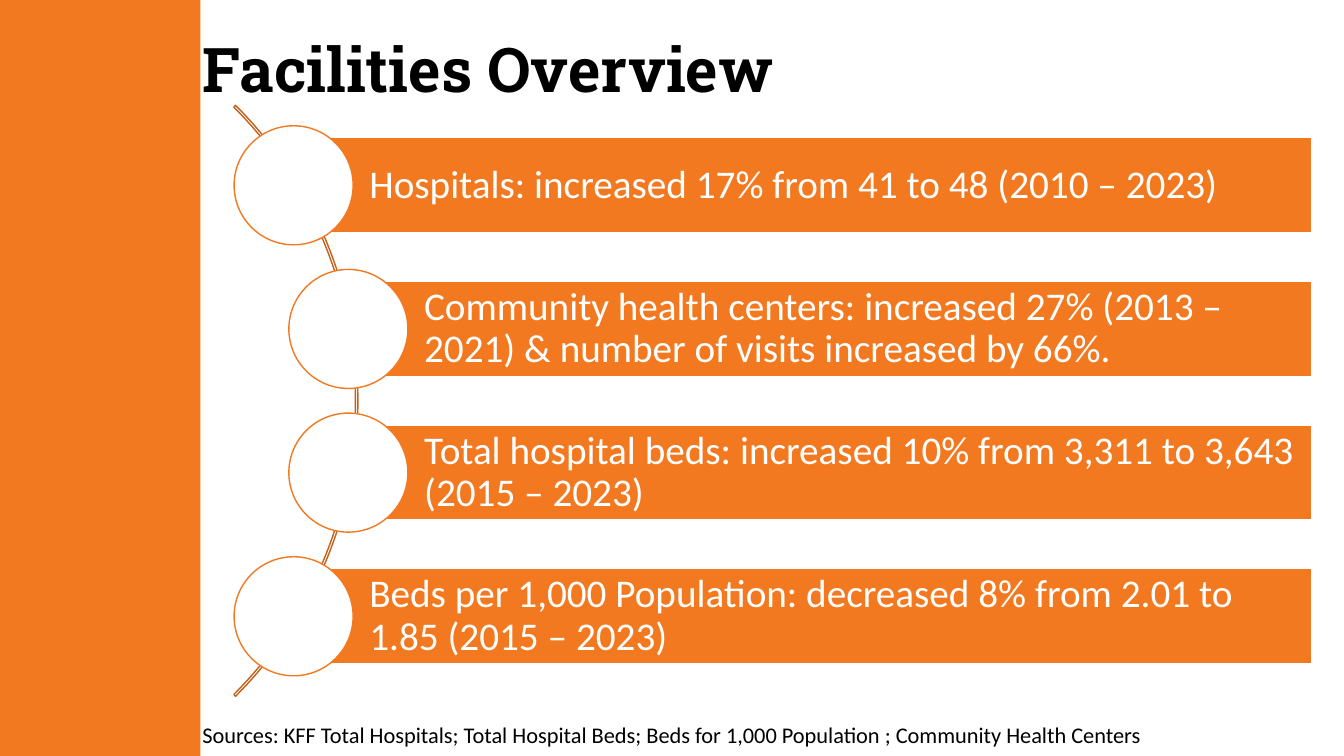
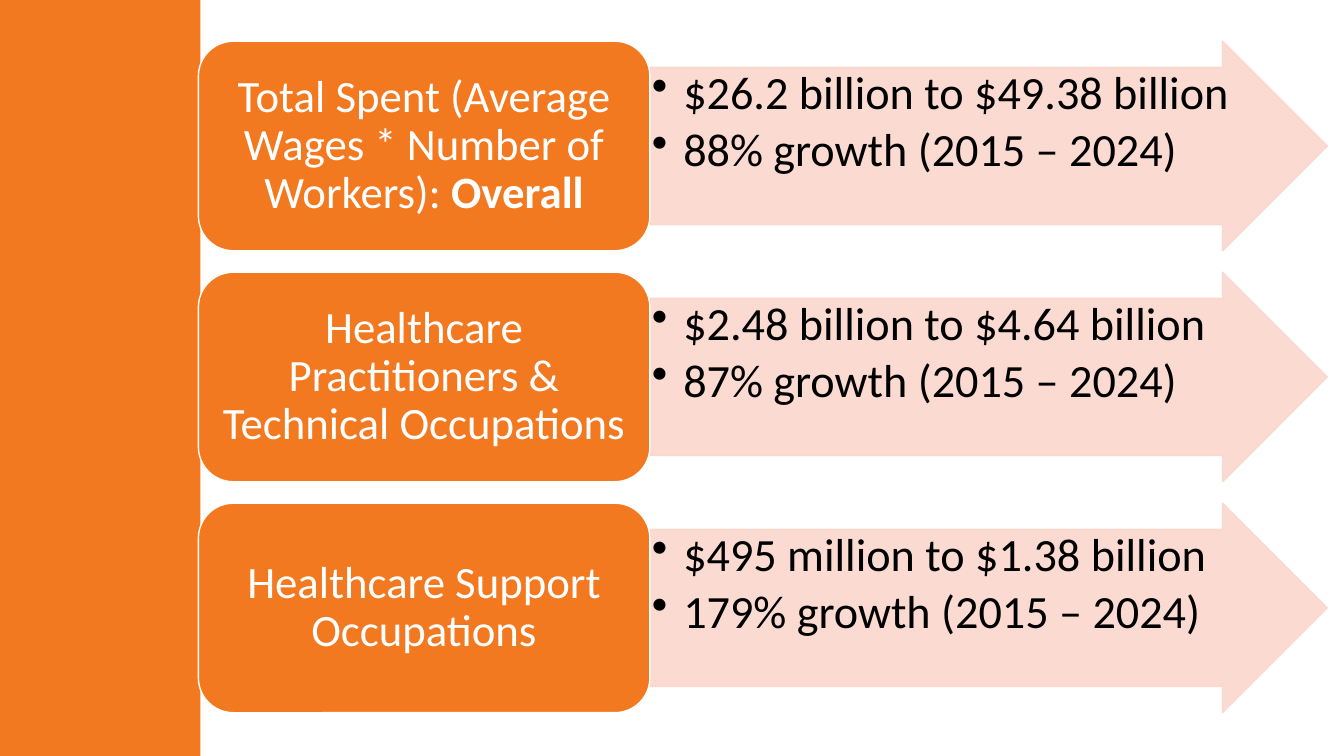
"""Builds two slides on health care facilities and spending."""
import lxml.etree
import pptx
import pptx.dml.color
import pptx.enum.shapes
import pptx.enum.text
import pptx.oxml.ns
import pptx.util

Cm = pptx.util.Cm
Pt = pptx.util.Pt
SHAPE = pptx.enum.shapes.MSO_SHAPE
ALIGN = pptx.enum.text.PP_ALIGN
ANCHOR = pptx.enum.text.MSO_ANCHOR
qn = pptx.oxml.ns.qn

ORANGE, RUST, PEACH = "F37920", "C3611A", "FAD7CD"
WHITE, BLACK = "FFFFFF", "000000"
SLIDE_WIDTH, SLIDE_HEIGHT, BAND_WIDTH = 33.87, 19.05, 5.05

TITLE = "Facilities Overview"
SOURCES = ("Sources: KFF Total Hospitals; Total Hospital Beds; "
           "Beds for 1,000 Population ; Community Health Centers")
OUTER_LEFT, INNER_LEFT = 5.9, 7.28
FACILITIES = [
    (OUTER_LEFT, "Hospitals: increased 17% from 41 to 48 (2010 – 2023)"),
    (INNER_LEFT, "Community health centers: increased 27% (2013 – 2021) "
                 "& number of visits increased by 66%."),
    (INNER_LEFT, "Total hospital beds: increased 10% from 3,311 to 3,643 (2015 – 2023)"),
    (OUTER_LEFT, "Beds per 1,000 Population: decreased 8% from 2.01 to 1.85 (2015 – 2023)"),
]
SPENDING = [
    ([("Total Spent (Average Wages * Number of Workers): ", False), ("Overall", True)],
     ["$26.2 billion to $49.38 billion", "88% growth (2015 – 2024)"]),
    ([("Healthcare Practitioners & Technical Occupations", False)],
     ["$2.48 billion to $4.64 billion", "87% growth (2015 – 2024)"]),
    ([("Healthcare Support Occupations", False)],
     ["$495 million to $1.38 billion", "179% growth (2015 – 2024)"]),
]


def rgb(value):
    """Turn a hex string into a colour."""
    return pptx.dml.color.RGBColor.from_string(value)


def write(frame, paragraphs, size, color=BLACK, font="Calibri", bold=False,
          align=ALIGN.LEFT, anchor=ANCHOR.MIDDLE, margins=(0.25, 0.13),
          spacing=0.9, after=0, bullet=False):
    """Write paragraphs, each a string or a list of (text, bold) runs."""
    frame.word_wrap = True
    frame.vertical_anchor = anchor
    frame.margin_left, frame.margin_right = Cm(margins[0]), Cm(margins[-2])
    frame.margin_top = frame.margin_bottom = Cm(margins[-1])
    for index, content in enumerate(paragraphs):
        paragraph = frame.add_paragraph() if index else frame.paragraphs[0]
        paragraph.alignment = align
        paragraph.line_spacing = spacing
        paragraph.space_before, paragraph.space_after = Pt(0), Pt(after)
        if bullet:
            properties = paragraph._p.get_or_add_pPr()
            properties.set("marL", str(Cm(0.79)))
            properties.set("indent", str(-Cm(0.79)))
            lxml.etree.SubElement(properties, qn("a:buChar")).set("char", "•")
        runs = [(content, bold)] if isinstance(content, str) else content
        for text, strong in runs:
            run = paragraph.add_run()
            run.text = text
            run.font.size, run.font.name, run.font.bold = Pt(size), font, strong
            run.font.color.rgb = rgb(color)


def draw(slide, kind, left, top, width, height, fill=None, line=None, opacity=100):
    """Add a flat preset shape, placed in centimetres."""
    shape = slide.shapes.add_shape(kind, Cm(left), Cm(top), Cm(width), Cm(height))
    shape.shadow.inherit = False
    if fill:
        shape.fill.solid()
        shape.fill.fore_color.rgb = rgb(fill)
    else:
        shape.fill.background()
    if line:
        shape.line.color.rgb = rgb(line)
        shape.line.width = Pt(1)
    else:
        shape.line.fill.background()
    if opacity < 100:
        for color in shape.element.spPr.iter(qn("a:srgbClr")):
            lxml.etree.SubElement(color, qn("a:alpha")).set("val", str(opacity * 1000))
    return shape


def add_band(presentation, slide):
    """Put the side band on the master, behind every slide."""
    band = draw(slide, SHAPE.RECTANGLE, 0, 0, BAND_WIDTH, SLIDE_HEIGHT, ORANGE)
    band.element.nvSpPr.cNvPr.set("id", "100")
    presentation.slide_master.shapes.element.insert(2, band.element)


def build_facilities(slide):
    """Fill the overview with an arc of circles and bars."""
    title = slide.shapes.title
    title.left, title.top, title.width, title.height = Cm(4.85), Cm(0), Cm(26.82), Cm(3.68)
    write(title.text_frame, [TITLE], 44, font="Roboto Slab", bold=True)
    sources = slide.shapes.add_textbox(Cm(4.85), Cm(18.03), Cm(27.89), Cm(0.94))
    write(sources.text_frame, [SOURCES], 16, anchor=ANCHOR.TOP, spacing=1)

    first_middle, pitch, circle, bar_height, bar_right = 4.67, 3.62, 3, 2.4, 33.05
    arc_size = 21.06
    arc_middle = first_middle + pitch * (len(FACILITIES) - 1) / 2
    arc = draw(slide, SHAPE.BLOCK_ARC, -12.04, arc_middle - arc_size / 2,
               arc_size, arc_size, line=RUST)
    for index, value in enumerate((189, 27, 0.003)):
        arc.adjustments[index] = value
    for index, (left, text) in enumerate(FACILITIES):
        middle = first_middle + index * pitch
        bar_left = left + circle / 2
        bar = draw(slide, SHAPE.RECTANGLE, bar_left, middle - bar_height / 2,
                   bar_right - bar_left, bar_height, ORANGE, WHITE)
        write(bar.text_frame, [text], 28, WHITE, margins=(1.91, 0.2, 0.2))
        draw(slide, SHAPE.OVAL, left, middle - circle / 2, circle, circle, WHITE, ORANGE)


def build_spending(slide):
    """Fill the spending slide with label and arrow rows."""
    first_top, pitch, height = 1.04, 5.82, 5.28
    label_left, label_width, arrow_width = 5, 11.38, 17.07
    for index, (label, facts) in enumerate(SPENDING):
        top = first_top + index * pitch
        arrow = draw(slide, SHAPE.RIGHT_ARROW, label_left + label_width, top,
                     arrow_width, height, PEACH, PEACH, opacity=90)
        arrow.adjustments[0], arrow.adjustments[1] = 0.75, 0.5
        write(arrow.text_frame, facts, 33, anchor=ANCHOR.TOP, margins=(0.05, 0.05),
              after=5, bullet=True)
        box = draw(slide, SHAPE.ROUNDED_RECTANGLE, label_left, top,
                   label_width, height, ORANGE, WHITE)
        write(box.text_frame, [label], 32, WHITE, align=ALIGN.CENTER, margins=(0.33, 0.18))


def main():
    """Build and save the presentation."""
    presentation = pptx.Presentation()
    presentation.slide_width, presentation.slide_height = Cm(SLIDE_WIDTH), Cm(SLIDE_HEIGHT)
    title_only, blank = presentation.slide_layouts[5], presentation.slide_layouts[6]
    facilities = presentation.slides.add_slide(title_only)
    add_band(presentation, facilities)
    build_facilities(facilities)
    build_spending(presentation.slides.add_slide(blank))
    presentation.save("out.pptx")


if __name__ == "__main__":
    main()
